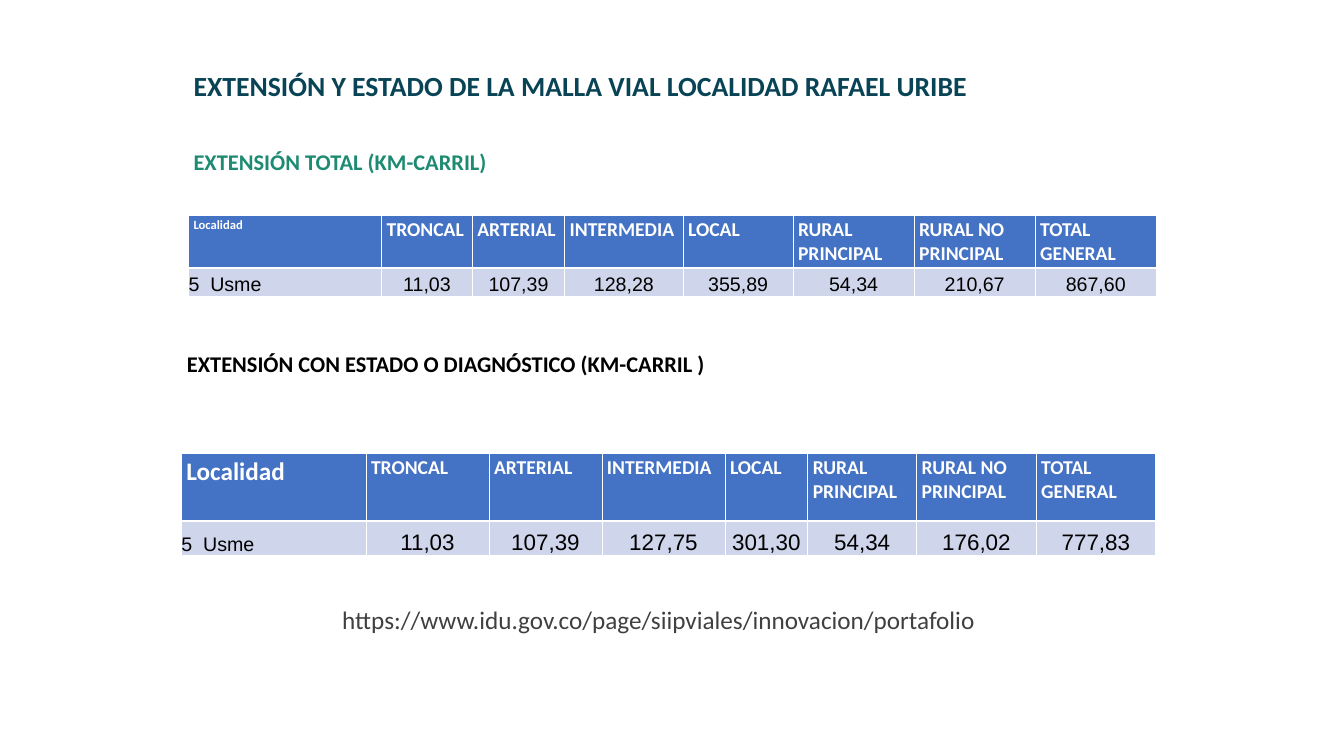
from lxml import etree
from pptx import Presentation
from pptx import util as u
from pptx.dml.color import RGBColor
from pptx.enum import text as t
from pptx.oxml.ns import qn

COLORS = {
    "title": "094456",
    "subtitle": "1D8A72",
    "link": "404040",
    "text": "000000",
    "white": "FFFFFF",
    "header": "4472C4",
    "band": "CFD5EA",
}
HEADERS = ["Localidad", "TRONCAL", "ARTERIAL", "INTERMEDIA", "LOCAL",
           "RURAL PRINCIPAL", "RURAL NO PRINCIPAL", "TOTAL GENERAL"]
TOTAL_LENGTHS = ["5  Usme", "11,03", "107,39", "128,28", "355,89",
                 "54,34", "210,67", "867,60"]
DIAGNOSED_LENGTHS = ["5  Usme", "11,03", "107,39", "127,75", "301,30",
                     "54,34", "176,02", "777,83"]


def color(name):
    return RGBColor.from_string(COLORS[name])


def write(frame, content, size, fill="text", font="Calibri", bold=False,
          align=t.PP_ALIGN.LEFT, spacing=1.0):
    para = frame.paragraphs[0]
    para.alignment = align
    para.line_spacing = spacing
    para.space_before = u.Pt(0)
    span = para.add_run()
    span.text = content
    span.font.name = font
    span.font.size = u.Pt(size)
    span.font.bold = bold
    span.font.color.rgb = color(fill)


def place(box, left, top, width, height, anchor=t.MSO_ANCHOR.TOP):
    """Position a box and return its wrapping text frame."""
    box.left, box.top = u.Cm(left), u.Cm(top)
    box.width, box.height = u.Cm(width), u.Cm(height)
    frame = box.text_frame
    frame.word_wrap = True
    frame.auto_size = t.MSO_AUTO_SIZE.NONE
    frame.vertical_anchor = anchor
    return frame


def add_borders(cell, bottom):
    properties = cell._tc.get_or_add_tcPr()
    for side in ("L", "R", "T", "B"):
        width = bottom if side == "B" else 1
        line = etree.SubElement(properties, qn(f"a:ln{side}"), w=str(u.Pt(width)))
        fill = etree.SubElement(line, qn("a:solidFill"))
        etree.SubElement(fill, qn("a:srgbClr"), val=COLORS["white"])


def paint(cell, fill, bottom_border):
    add_borders(cell, bottom_border)
    cell.fill.solid()
    cell.fill.fore_color.rgb = color(fill)


def add_length_table(slide, left, top, widths, heights, lengths,
                     first_header_size, length_size):
    table = slide.shapes.add_table(
        2, len(widths), u.Cm(left), u.Cm(top),
        u.Cm(sum(widths)), u.Cm(sum(heights))).table
    for row, height in zip(table.rows, heights):
        row.height = u.Cm(height)
    for index, width in enumerate(widths):
        table.columns[index].width = u.Cm(width)
        first = index == 0

        header = table.cell(0, index)
        paint(header, "header", 3)
        write(header.text_frame, HEADERS[index],
              first_header_size if first else 28, fill="white", bold=True)

        value = table.cell(1, index)
        paint(value, "band", 1)
        value.margin_left = value.margin_right = 0
        value.margin_top = value.margin_bottom = 0
        value.vertical_anchor = t.MSO_ANCHOR.BOTTOM
        write(value.text_frame, lengths[index], 28 if first else length_size,
              font="Arial",
              align=t.PP_ALIGN.LEFT if first else t.PP_ALIGN.CENTER)


def main():
    deck = Presentation()
    deck.slide_width, deck.slide_height = u.Cm(67.72), u.Cm(38.1)
    slide = deck.slides.add_slide(deck.slide_layouts.get_by_name("Comparison"))
    holders = {holder.placeholder_format.idx: holder
               for holder in slide.placeholders}
    for unused in (2, 4):
        element = holders[unused].element
        element.getparent().remove(element)

    middle = t.MSO_ANCHOR.MIDDLE
    write(place(slide.shapes.title, 9.5, 2.69, 41.22, 3.43, middle),
          "EXTENSIÓN Y ESTADO DE LA MALLA VIAL LOCALIDAD RAFAEL URIBE",
          39.6, fill="title", bold=True, spacing=0.9)
    write(place(holders[1], 9.5, 7.49, 41.22, 1.5, middle),
          "EXTENSIÓN TOTAL (KM-CARRIL)",
          32, fill="subtitle", bold=True, spacing=0.9)
    write(place(holders[3], 10.08, 30.61, 46.2, 1.57),
          "https://www.idu.gov.co/page/siipviales/innovacion/portafolio",
          36, fill="link", align=t.PP_ALIGN.CENTER, spacing=0.8)

    add_length_table(slide, 9.5, 10.85,
                     [9.73, 4.57, 4.65, 5.97, 5.54, 6.1, 6.1, 6.1],
                     [2.01, 1.4], TOTAL_LENGTHS,
                     first_header_size=18, length_size=28)
    diagnosis = slide.shapes.add_textbox(0, 0, 0, 0)
    write(place(diagnosis, 9.17, 17.5, 33.88, 7.09),
          "EXTENSIÓN CON ESTADO O DIAGNÓSTICO (KM-CARRIL )", 32, bold=True)
    add_length_table(slide, 9.14, 22.86,
                     [9.3, 6.2, 5.69, 6.2, 4.17, 5.49, 6.02, 6.02],
                     [3.4, 1.73], DIAGNOSED_LENGTHS,
                     first_header_size=36, length_size=32)
    deck.save("out.pptx")


if __name__ == "__main__":
    main()
